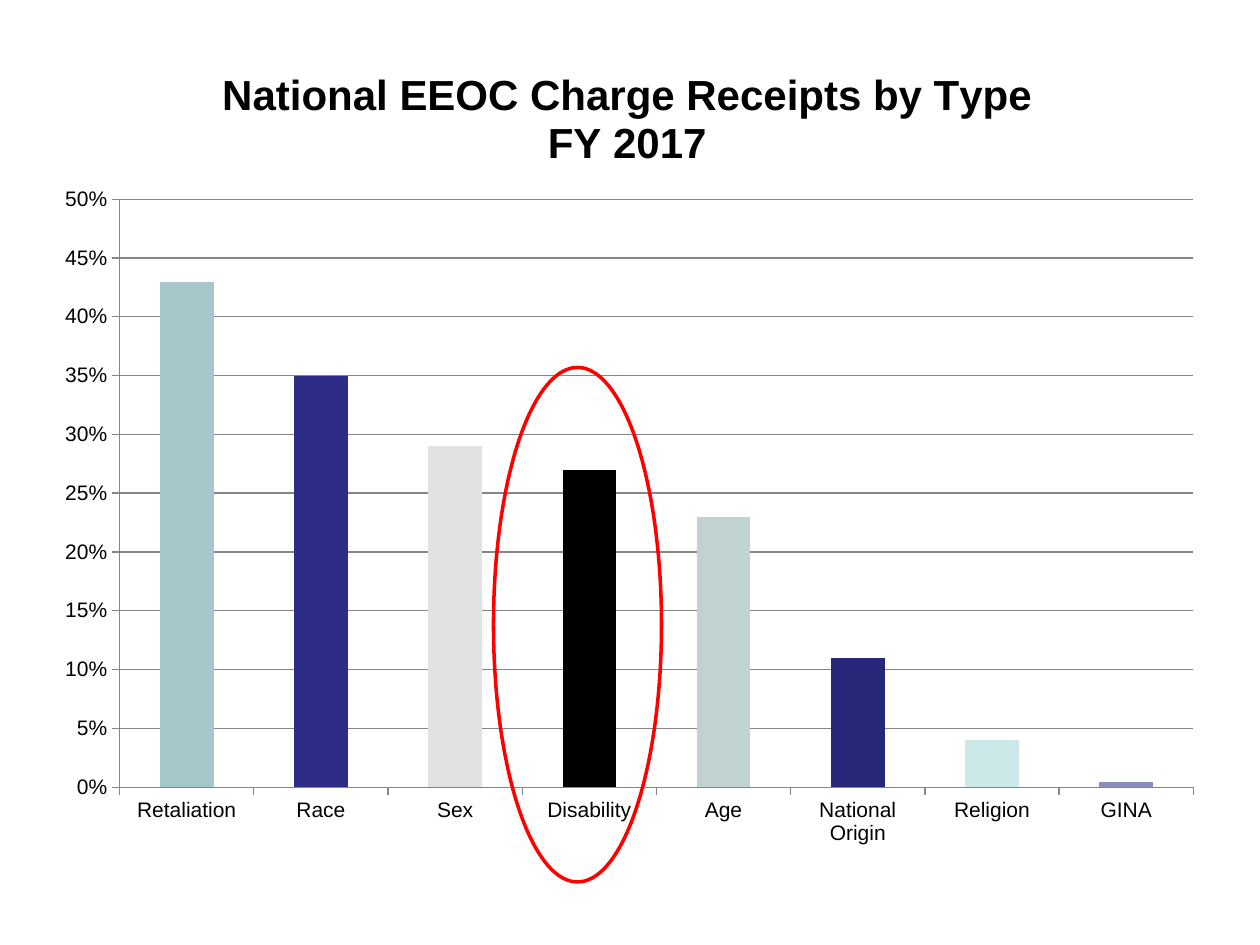
from lxml import etree
from pptx import Presentation
from pptx.chart.data import CategoryChartData
from pptx.dml.color import RGBColor
from pptx.enum.chart import XL_CHART_TYPE, XL_TICK_MARK
from pptx.enum.shapes import MSO_SHAPE
from pptx.oxml.ns import qn
from pptx.util import Inches, Pt

COLUMNS = XL_CHART_TYPE.COLUMN_CLUSTERED
OUTSIDE = XL_TICK_MARK.OUTSIDE
OVAL = MSO_SHAPE.OVAL
BLANK = 6
FONT = "Arial"

COLORS = {
    "text": "000000", "axis": "868686", "ring": "FF0000",
    "teal": "A5C7C9", "indigo": "2D2D87", "silver": "E2E2E2",
    "black": "000000", "mist": "C1D2D3", "navy": "272779",
    "aqua": "CDE8E8", "lilac": "8D8DBB",
}

# Category, share of all charges, bar colour
CHARGES = [
    ("Retaliation", 0.43, "teal"),
    ("Race", 0.35, "indigo"),
    ("Sex", 0.29, "silver"),
    ("Disability", 0.27, "black"),
    ("Age", 0.23, "mist"),
    ("National Origin", 0.11, "navy"),
    ("Religion", 0.04, "aqua"),
    ("GINA", 0.004, "lilac"),
]
TITLE = ["National EEOC Charge Receipts by Type", "FY 2017"]


def color(name):
    return RGBColor.from_string(COLORS[name])


def style(font, size, bold=False):
    font.name, font.size, font.bold = FONT, Pt(size), bold
    font.color.rgb = color("text")


def write(frame, lines, **form):
    for i, line in enumerate(lines):
        para = frame.add_paragraph() if i else frame.paragraphs[0]
        run = para.add_run()
        run.text = line
        style(run.font, **form)


def place(node, index, **shares):
    """Fix a chart part at shares of the chart's size."""
    for old in node.findall(qn("c:layout")):
        node.remove(old)
    layout = etree.Element(qn("c:layout"))
    node.insert(index, layout)
    manual = etree.SubElement(layout, qn("c:manualLayout"))
    rules = {"xMode": "edge", "yMode": "edge", **shares}
    if "w" in shares:
        rules = {"layoutTarget": "inner", **rules}
    for tag, val in rules.items():
        etree.SubElement(manual, qn(f"c:{tag}")).set("val", str(val))


class Deck:
    """Lengths are in columns and rows of a 30 by 45 grid."""

    def __init__(self, width=10, height=7.5):
        self.prs = Presentation()
        self.prs.slide_width = Inches(width)
        self.prs.slide_height = Inches(height)
        self.col, self.row = Inches(width) / 30, Inches(height) / 45
        self.slide = self.prs.slides.add_slide(self.prs.slide_layouts[BLANK])

    def box(self, x, y, w, h):
        return (round(x * self.col), round(y * self.row),
                round(w * self.col), round(h * self.row))

    def chart(self, box, title, rows):
        names, vals, tints = zip(*rows)
        data = CategoryChartData(number_format="0%")
        data.categories = names
        data.add_series("Series 1", vals)
        chart = self.slide.shapes.add_chart(COLUMNS, *self.box(*box), data).chart
        chart.has_legend = False
        style(chart.font, 10)

        # Title
        chart.has_title = True
        write(chart.chart_title.text_frame, title, size=24, bold=True)
        place(chart.chart_title._element, 1, x=0.15, y=0.03)

        # Bars
        plot = chart.plots[0]
        plot.gap_width, plot.vary_by_categories = 150, False
        for i, tint in enumerate(tints):
            fill = plot.series[0].points[i].format.fill
            fill.solid()
            fill.fore_color.rgb = color(tint)
        area = chart._chartSpace.find(".//" + qn("c:plotArea"))
        place(area, 0, x=0.066, y=0.192, w=0.913, h=0.718)

        # Axes and grid
        scale = chart.value_axis
        scale.minimum_scale, scale.maximum_scale = 0, 0.5
        scale.major_unit = 0.05
        scale.has_major_gridlines = True
        scale.tick_labels.number_format = "0%"
        scale.tick_labels.number_format_is_linked = False
        for axis in (chart.category_axis, scale):
            axis.major_tick_mark = OUTSIDE
            style(axis.tick_labels.font, 12)
        for part in (chart.category_axis, scale, scale.major_gridlines):
            part.format.line.color.rgb = color("axis")
            part.format.line.width = Pt(0.75)

    def ring(self, box, tint, width):
        oval = self.slide.shapes.add_shape(OVAL, *self.box(*box))
        oval.shadow.inherit = False
        oval.fill.background()
        oval.line.color.rgb = color(tint)
        oval.line.width = Pt(width)


def main():
    deck = Deck()
    deck.chart((1, 2, 28, 39), TITLE, CHARGES)
    # Highlight the Disability bar
    deck.ring((11.75, 17.5, 4, 24.5), "ring", 2)
    deck.prs.save("out.pptx")


if __name__ == "__main__":
    main()
